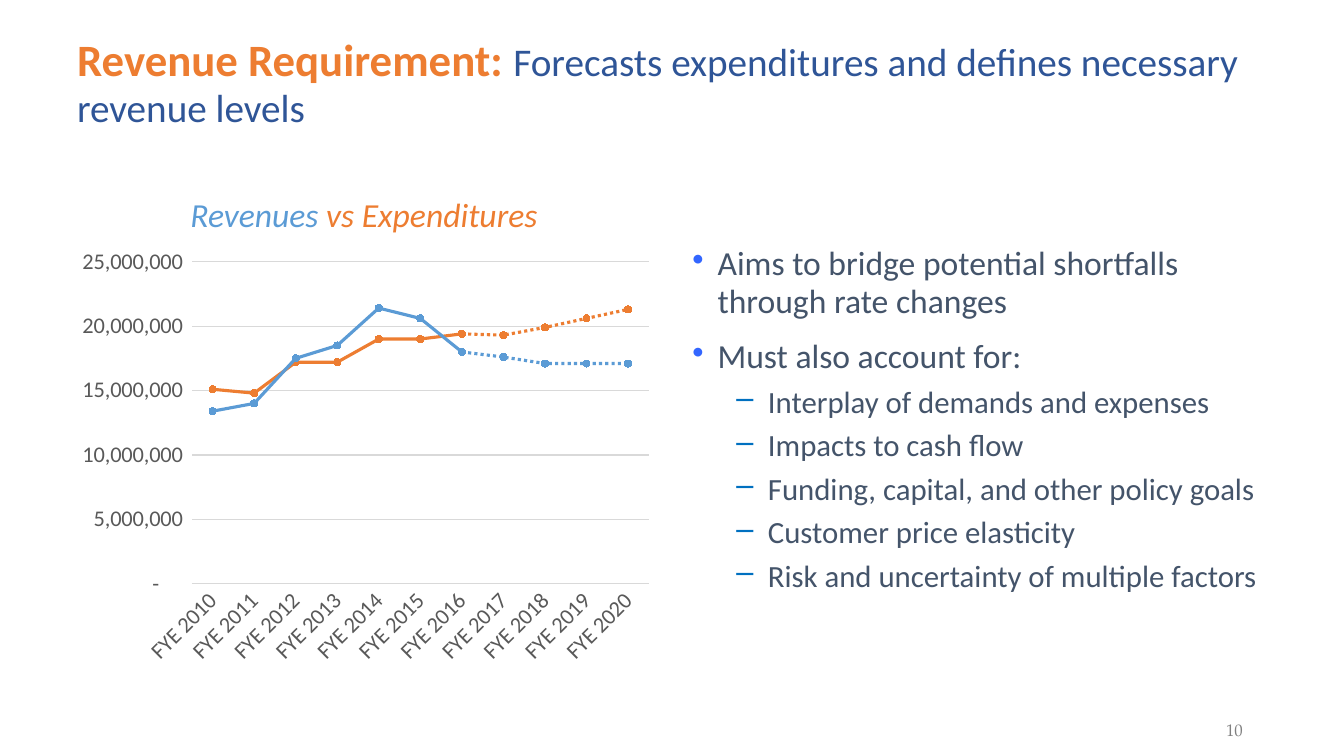
from dataclasses import dataclass

from lxml import etree
from pptx import Presentation
from pptx.chart.data import CategoryChartData
from pptx.dml.color import RGBColor
from pptx.enum.chart import XL_CHART_TYPE, XL_MARKER_STYLE, XL_TICK_MARK
from pptx.enum.dml import MSO_LINE
from pptx.enum.text import MSO_ANCHOR, PP_ALIGN
from pptx.oxml.ns import qn
from pptx.util import Pt

LINE_MARKERS = XL_CHART_TYPE.LINE_MARKERS
CIRCLE = XL_MARKER_STYLE.CIRCLE
NO_TICK = XL_TICK_MARK.NONE
DOTTED = MSO_LINE.ROUND_DOT
TOP, BOTTOM = MSO_ANCHOR.TOP, MSO_ANCHOR.BOTTOM
LEFT, CENTER = PP_ALIGN.LEFT, PP_ALIGN.CENTER


@dataclass(frozen=True)
class Theme:
    font: str = "Calibri"
    number_font: str = "TeX Gyre Pagella"
    orange: str = "ED7D31"
    blue: str = "5B9BD5"
    navy: str = "2F5597"
    slate: str = "44546A"
    gray: str = "808080"
    axis_text: str = "595959"
    grid: str = "D9D9D9"
    bullet: str = "3366FF"
    dash: str = "0070C0"
    title_size: int = 32
    subtitle_size: int = 28
    body_size: int = 24
    detail_size: int = 22
    axis_size: int = 16
    number_size: int = 12
    line_spacing: float = 0.95


THEME = Theme()

MARGIN = 48
COLUMN_WIDTH = 424
COLUMN_TOP = 171.4
COLUMN_HEIGHT = 311
RIGHT_COLUMN = 487.5

YEARS = range(2010, 2021)
EXPENDITURES = [15.1, 14.8, 17.2, 17.2, 19.0, 19.0, 19.4, 19.3, 19.9, 20.6, 21.3]
REVENUES = [13.4, 14.0, 17.5, 18.5, 21.4, 20.6, 18.0, 17.6, 17.1, 17.1, 17.1]
LAST_ACTUAL = 6
MILLION = 1_000_000
NUMBER_FORMAT = '_(* #,##0_);_(* \\(#,##0\\);_(* "-"??_);_(@_)'
PLOT_AREA = {"x": 0.21, "y": 0.05, "w": 0.77, "h": 0.74}

POINTS = [
    (0, "Aims to bridge potential shortfalls through rate changes"),
    (0, "Must also account for:"),
    (1, "Interplay of demands and expenses"),
    (1, "Impacts to cash flow"),
    (1, "Funding, capital, and other policy goals"),
    (1, "Customer price elasticity"),
    (1, "Risk and uncertainty of multiple factors"),
]


class SlideBuilder:
    def __init__(self, slide, theme):
        self.slide = slide
        self.theme = theme

    def style(self, font, size, color, name=None):
        font.name = name or self.theme.font
        font.size = Pt(size)
        font.color.rgb = RGBColor.from_string(color)

    def text_frame(self, left, top, width, height, anchor=TOP):
        box = self.slide.shapes.add_textbox(Pt(left), Pt(top), Pt(width), Pt(height))
        frame = box.text_frame
        frame.word_wrap = True
        frame.vertical_anchor = anchor
        return frame

    def heading(self, bounds, runs, anchor=TOP, align=LEFT, italic=None):
        """Write one paragraph from (text, size, color, bold) runs."""
        paragraph = self.text_frame(*bounds, anchor).paragraphs[0]
        paragraph.alignment = align
        paragraph.line_spacing = self.theme.line_spacing
        paragraph.font.italic = italic
        for text, size, color, bold in runs:
            run = paragraph.add_run()
            run.text = text
            self.style(run.font, size, color)
            run.font.bold = bold

    def bullet_list(self, bounds, points):
        theme = self.theme
        levels = [
            (18, -18, "•", theme.bullet, theme.body_size, 12),
            (54, -22.5, "–", theme.dash, theme.detail_size, 6),
        ]
        frame = self.text_frame(*bounds)
        for index, (level, text) in enumerate(points):
            margin, indent, mark, mark_color, size, space = levels[level]
            paragraph = frame.add_paragraph() if index else frame.paragraphs[0]
            paragraph.text = text
            paragraph.level = level
            paragraph.line_spacing = theme.line_spacing
            if index:
                paragraph.space_before = Pt(space)
            properties = paragraph._p.get_or_add_pPr()
            properties.set("marL", str(Pt(margin)))
            properties.set("indent", str(Pt(indent)))
            color = etree.SubElement(properties, qn("a:buClr"))
            etree.SubElement(color, qn("a:srgbClr"), val=mark_color)
            etree.SubElement(properties, qn("a:buChar"), char=mark)
            self.style(paragraph.font, size, theme.slate)

    def page_number(self, bounds, text):
        frame = self.text_frame(*bounds, BOTTOM)
        frame.margin_left = frame.margin_right = Pt(3.6)
        paragraph = frame.paragraphs[0]
        paragraph.text = text
        paragraph.alignment = CENTER
        self.style(paragraph.font, self.theme.number_size, self.theme.gray,
                   self.theme.number_font)

    def line_chart(self, bounds, categories, lines):
        """Draw (name, values, color, dash) lines on a shared axis."""
        data = CategoryChartData(number_format=NUMBER_FORMAT)
        data.categories = categories
        for name, values, _, _ in lines:
            data.add_series(name, values)
        chart = self.slide.shapes.add_chart(LINE_MARKERS, *map(Pt, bounds), data).chart
        chart.has_legend = False
        chart.has_title = False
        self.style(chart.font, self.theme.axis_size, self.theme.axis_text)
        chart.plots[0].vary_by_categories = False
        for series, (_, _, color, dash) in zip(chart.plots[0].series, lines):
            rgb = RGBColor.from_string(color)
            series.smooth = False
            series.format.line.width = Pt(2.25)
            series.format.line.color.rgb = rgb
            if dash:
                series.format.line.dash_style = dash
            series.marker.style = CIRCLE
            series.marker.size = 5
            series.marker.format.fill.solid()
            series.marker.format.fill.fore_color.rgb = rgb
            series.marker.format.line.color.rgb = rgb
        self.format_axes(chart)
        self.place_plot(chart)

    def format_axes(self, chart):
        category_axis, value_axis = chart.category_axis, chart.value_axis
        for axis in (category_axis, value_axis):
            axis.major_tick_mark = axis.minor_tick_mark = NO_TICK
            self.style(axis.tick_labels.font, self.theme.axis_size, self.theme.axis_text)
        label_body = category_axis._element.find(qn("c:txPr")).find(qn("a:bodyPr"))
        label_body.set("rot", str(-45 * 60000))
        value_axis.minimum_scale = 0
        value_axis.maximum_scale = 25 * MILLION
        value_axis.major_unit = 5 * MILLION
        value_axis.tick_labels.number_format = NUMBER_FORMAT
        value_axis.tick_labels.number_format_is_linked = False
        value_axis.format.line.fill.background()
        for line in (category_axis.format.line, value_axis.major_gridlines.format.line):
            line.width = Pt(0.75)
            line.color.rgb = RGBColor.from_string(self.theme.grid)

    def place_plot(self, chart):
        """Fix the inner plot area as fractions of the chart."""
        plot_area = chart._chartSpace.find(qn("c:chart")).find(qn("c:plotArea"))
        for layout in plot_area.findall(qn("c:layout")):
            plot_area.remove(layout)
        layout = etree.Element(qn("c:layout"))
        plot_area.insert(0, layout)
        manual = etree.SubElement(layout, qn("c:manualLayout"))
        etree.SubElement(manual, qn("c:layoutTarget"), val="inner")
        for side in "xy":
            etree.SubElement(manual, qn(f"c:{side}Mode"), val="edge")
        for side, fraction in PLOT_AREA.items():
            etree.SubElement(manual, qn(f"c:{side}"), val=str(fraction))


def actual_and_forecast(name, millions, color):
    """Split one history into a solid line and a dotted line that meet."""
    values = [round(value * MILLION) for value in millions]
    actual = values[:LAST_ACTUAL + 1] + [None] * (len(values) - LAST_ACTUAL - 1)
    forecast = [None] * LAST_ACTUAL + values[LAST_ACTUAL:]
    return (name, actual, color, None), (f"Forecast {name}", forecast, color, DOTTED)


def main():
    presentation = Presentation()
    presentation.slide_width, presentation.slide_height = Pt(960), Pt(540)
    slide = presentation.slides.add_slide(presentation.slide_layouts[6])
    builder = SlideBuilder(slide, THEME)

    builder.page_number((849, 510.5, 65.5, 21.6), "10")
    builder.heading((MARGIN, 21.6, 864, 60), [
        ("Revenue Requirement: ", THEME.title_size, THEME.orange, True),
        ("Forecasts expenditures and defines necessary revenue levels",
         THEME.subtitle_size, THEME.navy, False),
    ])
    builder.heading((MARGIN, 121, COLUMN_WIDTH, 50.4), [
        ("Revenues", THEME.body_size, THEME.blue, None),
        (" vs Expenditures", THEME.body_size, THEME.orange, None),
    ], BOTTOM, CENTER, italic=True)
    builder.bullet_list((RIGHT_COLUMN, COLUMN_TOP, COLUMN_WIDTH, COLUMN_HEIGHT), POINTS)

    spent, spent_forecast = actual_and_forecast("Expenditures", EXPENDITURES, THEME.orange)
    earned, earned_forecast = actual_and_forecast("Revenues", REVENUES, THEME.blue)
    builder.line_chart((MARGIN, COLUMN_TOP, COLUMN_WIDTH, COLUMN_HEIGHT),
                       [f"FYE {year}" for year in YEARS],
                       [spent, earned, spent_forecast, earned_forecast])
    presentation.save("out.pptx")


if __name__ == "__main__":
    main()
